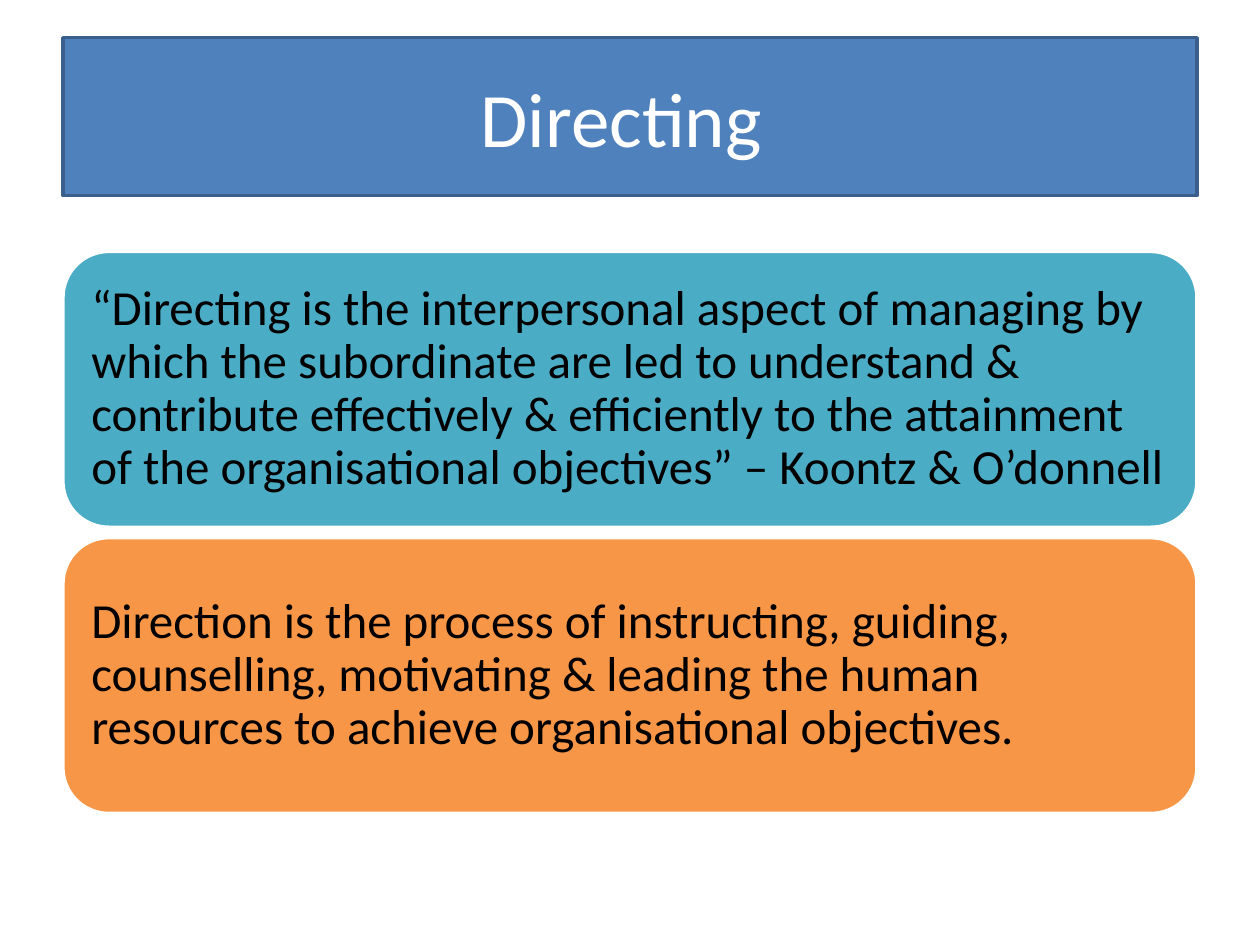
from pptx import Presentation
from pptx.dml.color import RGBColor
from pptx.enum.shapes import MSO_SHAPE as Shape
from pptx.enum.text import MSO_ANCHOR as Anchor, PP_ALIGN as Align
from pptx.util import Cm, Pt

BLUE = RGBColor(0x4F, 0x81, 0xBD)
DARK_BLUE = RGBColor(0x3A, 0x5F, 0x8C)
TEAL = RGBColor(0x4B, 0xAC, 0xC6)
ORANGE = RGBColor(0xF7, 0x96, 0x46)
WHITE = RGBColor(0xFF, 0xFF, 0xFF)
BLACK = RGBColor(0, 0, 0)

DEFINITIONS = [
    ("“Directing is the interpersonal aspect of managing by which the "
     "subordinate are led to understand & contribute effectively & "
     "efficiently to the attainment of the organisational objectives” "
     "– Koontz & O’donnell", TEAL),
    ("Direction is the process of instructing, guiding, counselling, "
     "motivating & leading the human resources to achieve organisational "
     "objectives.", ORANGE),
]


def add_panel(slide, outline, box, fill, border, text, size, color, align):
    """Add a filled shape with one paragraph and return the shape."""
    panel = slide.shapes.add_shape(outline, *box)
    panel.shadow.inherit = False
    panel.fill.solid()
    panel.fill.fore_color.rgb = fill
    panel.line.color.rgb = border
    panel.line.width = Pt(2)
    frame = panel.text_frame
    frame.word_wrap = True
    frame.vertical_anchor = Anchor.MIDDLE
    paragraph = frame.paragraphs[0]
    paragraph.text = text
    paragraph.alignment = align
    paragraph.font.name = "Calibri"
    paragraph.font.size = Pt(size)
    paragraph.font.color.rgb = color
    return panel


def add_title(slide, box):
    add_panel(slide, Shape.RECTANGLE, box, BLUE, DARK_BLUE,
              "Directing ", 44, WHITE, Align.CENTER)


def add_definitions(slide, box):
    """Stack the definitions at equal heights within the box."""
    left, top, width, height = box
    gap = Cm(0.21)
    count = len(DEFINITIONS)
    panel_height = (height - gap * (count - 1)) // count
    for index, (text, fill) in enumerate(DEFINITIONS):
        panel_top = top + index * (panel_height + gap)
        panel = add_panel(slide, Shape.ROUNDED_RECTANGLE,
                          (left, panel_top, width, panel_height),
                          fill, WHITE, text, 28, BLACK, Align.LEFT)
        frame = panel.text_frame
        frame.margin_left = frame.margin_right = Cm(0.3)
        frame.margin_top = frame.margin_bottom = Cm(0.3)
        frame.paragraphs[0].line_spacing = 0.9


def main():
    deck = Presentation()
    deck.slide_width, deck.slide_height = Cm(25.4), Cm(19.05)
    slide = deck.slides.add_slide(deck.slide_layouts[6])
    margin = Cm(1.27)
    content_width = deck.slide_width - 2 * margin

    # Title bar
    add_title(slide, (margin, Cm(0.76), content_width, Cm(3.18)))
    # Definition panels
    add_definitions(slide, (margin, Cm(5.07), content_width, Cm(11.33)))

    deck.save("out.pptx")


if __name__ == "__main__":
    main()
